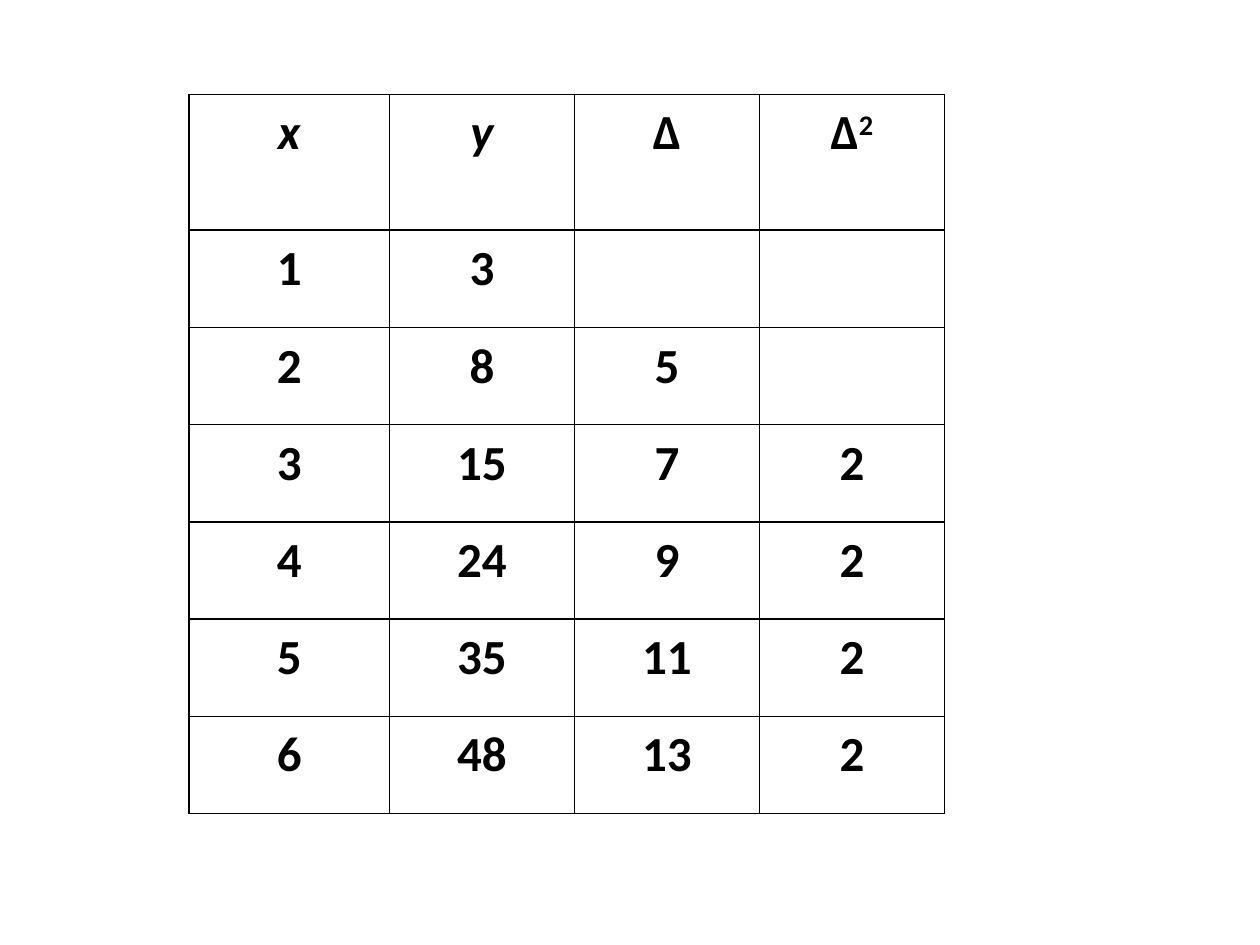
from lxml.etree import SubElement
from pptx import Presentation
from pptx.dml.color import RGBColor
from pptx.enum.text import MSO_ANCHOR, PP_ALIGN
from pptx.oxml.ns import qn
from pptx.util import Cm, Pt

BLACK = RGBColor(0, 0, 0)
WHITE = RGBColor(255, 255, 255)

HEADER = ["x", "y", "Δ", "Δ^2"]
ROWS = [
    ["1", "3", "", ""],
    ["2", "8", "5", ""],
    ["3", "15", "7", "2"],
    ["4", "24", "9", "2"],
    ["5", "35", "11", "2"],
    ["6", "48", "13", "2"],
]
VARIABLES = {"x", "y"}
COL_WIDTHS = [4.04, 3.73, 3.73, 3.73]
ROW_HEIGHTS = [2.74] + [1.96] * len(ROWS)


class SlideBuilder:
    font = {"name": "Calibri", "size": Pt(28), "bold": True}
    cell = {
        "margin_left": Cm(0.18), "margin_right": Cm(0.18),
        "margin_top": 0, "margin_bottom": 0,
        "vertical_anchor": MSO_ANCHOR.TOP,
    }
    paragraph = {"alignment": PP_ALIGN.CENTER, "line_spacing": 1.15}

    def __init__(self, slide):
        self.s = slide

    @staticmethod
    def apply(target, values):
        for name, value in values.items():
            setattr(target, name, value)

    def add_run(self, p, text, italic=False, superscript=False):
        r = p.add_run()
        r.text = text
        self.apply(r.font, {**self.font, "italic": italic})
        r.font.color.rgb = BLACK
        if superscript:
            r._r.get_or_add_rPr().set("baseline", "30000")

    def add_borders(self, cell):
        tc_pr = cell._tc.get_or_add_tcPr()
        for side in ("lnL", "lnR", "lnT", "lnB"):
            ln = SubElement(tc_pr, qn(f"a:{side}"), w=str(Pt(1)))
            fill = SubElement(ln, qn("a:solidFill"))
            SubElement(fill, qn("a:srgbClr"), val=str(BLACK))

    def fill_cell(self, cell, text):
        """Format a cell; text after ^ becomes a superscript."""
        self.apply(cell, self.cell)
        self.add_borders(cell)
        cell.fill.solid()
        cell.fill.fore_color.rgb = WHITE
        p = cell.text_frame.paragraphs[0]
        self.apply(p, self.paragraph)
        base, _, power = text.partition("^")
        if base:
            self.add_run(p, base, italic=base in VARIABLES)
        if power:
            self.add_run(p, power, superscript=True)

    def add_table(self, left, top, widths, heights, data):
        frame = self.s.shapes.add_table(
            len(heights), len(widths), Cm(left), Cm(top),
            Cm(sum(widths)), Cm(sum(heights)))
        table = frame.table
        self.apply(table, {"first_row": False, "horz_banding": False})
        for col, width in zip(table.columns, widths):
            col.width = Cm(width)
        for row, height, texts in zip(table.rows, heights, data):
            row.height = Cm(height)
            for cell, text in zip(row.cells, texts):
                self.fill_cell(cell, text)


def main():
    prs = Presentation()
    prs.slide_width, prs.slide_height = Cm(25.4), Cm(19.05)
    builder = SlideBuilder(prs.slides.add_slide(prs.slide_layouts[6]))
    builder.add_table(3.81, 1.9, COL_WIDTHS, ROW_HEIGHTS, [HEADER] + ROWS)
    prs.save("out.pptx")


if __name__ == "__main__":
    main()
